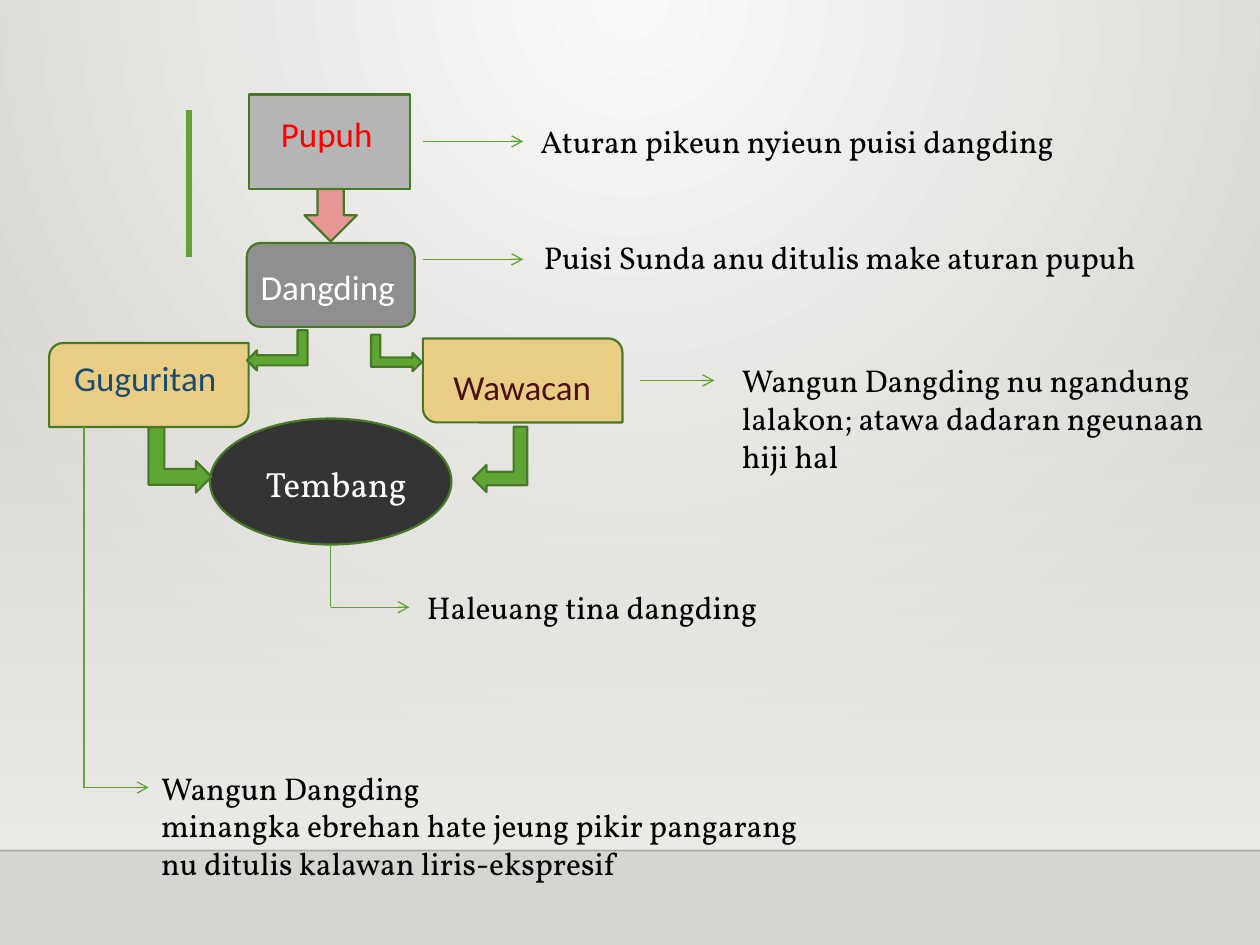
from lxml import etree
from pptx import Presentation
from pptx.dml.color import RGBColor
from pptx.enum import shapes, text
from pptx.oxml import ns, parse_xml
from pptx.util import Pt

COLORS = {
    "green": "5FA534", "outline": "467A26", "gold": "EACD85", "pale grey": "B5B5B5",
    "grey": "8F8F8F", "charcoal": "343434", "pink": "E79696", "red": "FF0000",
    "white": "FFFFFF", "blue": "1A4D71", "maroon": "4C1212", "black": "000000",
    "horizon": "000001", "panel": "EDEBE7", "centre": "FAFAF9", "edge": "D7D5D2",
}
SHAPE = shapes.MSO_SHAPE


def rgb(name):
    """Return the named colour."""
    return RGBColor.from_string(COLORS[name])


def gradient(first, last, direction, first_alpha=100):
    """Return a two-stop gradient fill element."""
    return parse_xml(
        f'<a:gradFill {ns.nsdecls("a")} rotWithShape="1"><a:gsLst>'
        f'<a:gs pos="0"><a:srgbClr val="{COLORS[first]}">'
        f'<a:alpha val="{first_alpha * 1000}"/></a:srgbClr></a:gs>'
        f'<a:gs pos="100000"><a:srgbClr val="{COLORS[last]}"/></a:gs>'
        f'</a:gsLst>{direction}</a:gradFill>')


def replace_fill(properties, fill):
    """Swap the solid fill of a properties element for another fill."""
    properties.replace(properties.find(ns.qn("a:solidFill")), fill)


def add_backdrop(slide):
    """Paint the radial background, the fading panel and the horizon line."""
    slide.background.fill.solid()
    replace_fill(slide.background._cSld.bg.bgPr, gradient(
        "centre", "edge",
        '<a:path path="circle"><a:fillToRect l="43000" t="0" r="43000" b="100000"/></a:path>'))
    panel = add_block(slide, SHAPE.RECTANGLE, (0, 158.4, 720, 326.9), "panel")
    panel.line.fill.background()
    replace_fill(panel._element.spPr, gradient(
        "panel", "panel", '<a:lin ang="5400000" scaled="0"/>', first_alpha=0))
    horizon = add_line(slide, (0, 486), (720, 486), "horizon", 1)
    color = horizon.line._ln.find(".//" + ns.qn("a:srgbClr"))
    etree.SubElement(color, ns.qn("a:alpha"), val="20000")


def add_block(slide, preset, box, fill, rotation=0, flip=False):
    """Add an outlined preset shape."""
    block = slide.shapes.add_shape(preset, *map(Pt, box))
    block.shadow.inherit = False
    block.fill.solid()
    block.fill.fore_color.rgb = rgb(fill)
    block.line.color.rgb = rgb("outline")
    block.line.width = Pt(1.25)
    block.rotation = rotation
    if flip:
        block._element.spPr.xfrm.set("flipH", "1")
    return block


def add_line(slide, start, end, color="green", width=0.75, arrow=False):
    """Add a straight connector, with an open arrowhead if asked."""
    line = slide.shapes.add_connector(
        shapes.MSO_CONNECTOR.STRAIGHT, *map(Pt, (*start, *end)))
    line.line.color.rgb = rgb(color)
    line.line.width = Pt(width)
    if arrow:
        etree.SubElement(line.line._ln, ns.qn("a:tailEnd"), type="arrow")
    etree.SubElement(line._element.spPr, ns.qn("a:effectLst"))
    return line


def add_elbow(slide, start, end):
    """Lead a line down and then right to an arrowhead."""
    corner = (start[0], end[1])
    add_line(slide, start, corner)
    add_line(slide, corner, end, arrow=True)


def add_text(slide, box, words, color="black", font="Vollkorn", size=18, wrap=False):
    """Add a text box whose paragraphs share one format."""
    label = slide.shapes.add_textbox(*map(Pt, box))
    frame = label.text_frame
    frame.word_wrap = wrap
    frame.auto_size = text.MSO_AUTO_SIZE.SHAPE_TO_FIT_TEXT
    frame.text = words
    for paragraph in frame.paragraphs:
        for run in paragraph.runs:
            run.font.name = font
            run.font.size = Pt(size)
            run.font.color.rgb = rgb(color)


def main():
    """Build the diagram of Sundanese verse forms."""
    deck = Presentation()
    deck.slide_width, deck.slide_height = Pt(720), Pt(540)
    slide = deck.slides.add_slide(deck.slide_layouts[6])
    add_backdrop(slide)
    add_line(slide, (108, 62.8), (108, 146.9), width=3)

    for preset, box, fill, flip in (
        (SHAPE.ROUNDED_RECTANGLE, (141, 138.8, 96, 48), "grey", False),
        (SHAPE.ROUND_2_DIAG_RECTANGLE, (28.1, 196, 114, 48), "gold", False),
        (SHAPE.ROUND_2_DIAG_RECTANGLE, (241.7, 193.4, 114, 48), "gold", True),
        (SHAPE.OVAL, (120, 239.2, 138, 72), "charcoal", False),
        (SHAPE.RECTANGLE, (142.1, 54, 92, 54), "pale grey", False),
        (SHAPE.DOWN_ARROW, (174, 108, 30, 30), "pink", False),
    ):
        add_block(slide, preset, box, fill, flip=flip)

    for box, leftward in (
        ((216, 187.2, 21, 29), False),
        ((146.9, 182.9, 23, 34.6), True),
        ((84.2, 244.8, 37.4, 36), False),
        ((267.1, 247, 37.4, 31), True),
    ):
        add_block(slide, SHAPE.BENT_UP_ARROW, box, "green",
                  rotation=270 if leftward else 90, flip=leftward)

    for box, name, color, font in (
        ((153.4, 60.5, 72, 31.5), "Pupuh", "red", "Calibri"),
        ((141.8, 148.3, 94.3, 31.5), "Dangding", "white", "Calibri"),
        ((35.3, 200.2, 100, 31.5), "Guguritan", "blue", "Calibri"),
        ((252, 205.2, 98.6, 31.5), "Wawacan", "maroon", "Calibri"),
        ((144.7, 260.6, 98, 31.5), "Tembang", "white", "Vollkorn"),
    ):
        add_text(slide, box, name, color, font, size=20, wrap=name == "Pupuh")

    for left, right, height in ((242, 299, 80.8), (242, 299, 148.2), (365.8, 408.2, 217.4)):
        add_line(slide, (left, height), (right, height), arrow=True)
    add_elbow(slide, (48, 244), (85, 450))
    add_elbow(slide, (189, 311.2), (234, 347))

    for box, meaning in (
        ((301.7, 66.2, 321.8, 29), "Aturan pikeun nyieun puisi dangding"),
        ((303.8, 132.5, 367.2, 29), "Puisi Sunda anu ditulis make aturan pupuh"),
        ((416.9, 203, 293, 72.7),
         "Wangun Dangding nu ngandung\nlalakon; atawa dadaran ngeunaan\nhiji hal"),
        ((85, 435.6, 392.4, 72.7),
         "Wangun Dangding\nminangka ebrehan hate jeung pikir pangarang\n"
         "nu ditulis kalawan liris-ekspresif"),
        ((236.9, 332.6, 211.7, 29), "Haleuang tina dangding"),
    ):
        add_text(slide, box, meaning)

    deck.save("out.pptx")


if __name__ == "__main__":
    main()
